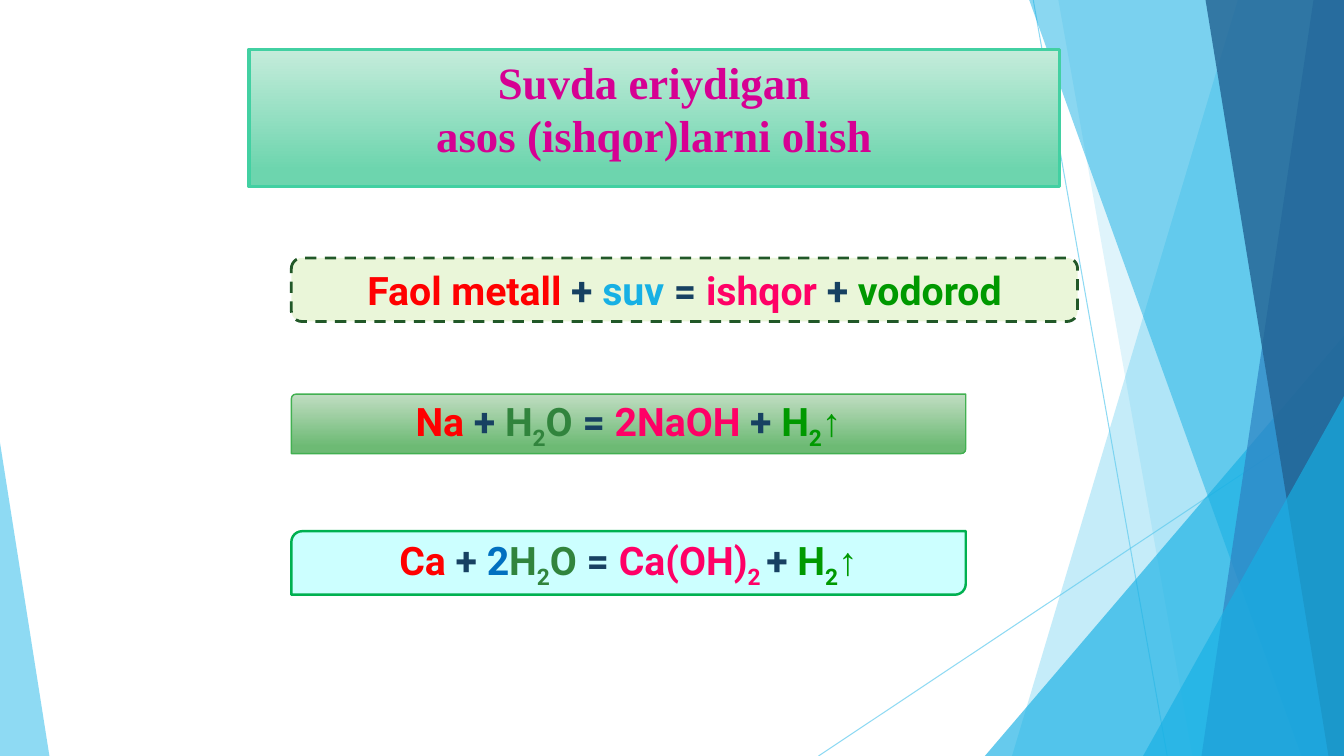
from lxml import etree
from pptx import Presentation
from pptx import util as u
from pptx.dml.color import RGBColor
from pptx.enum import dml, shapes, text
from pptx.oxml.ns import qn

COLORS = {
    "sky": "5FCBEF", "cyan": "17B0E4", "blue": "2E83C3", "deep": "226292",
    "red": "FF0000", "navy": "174162", "pink": "FF0066", "green": "009900",
    "moss": "31843D", "azure": "0070C0", "magenta": "D60093",
    "lime": "EAF6D9", "forest": "215828", "ice": "CCFFFF", "emerald": "00B050",
    "mint_light": "C5ECDB", "mint": "6DD5AE", "mint_edge": "42D0A2",
    "leaf_light": "C0DDC2", "leaf": "6DBA74", "leaf_edge": "42B051",
}
RGB = {name: RGBColor.from_string(value) for name, value in COLORS.items()}

presentation = Presentation()
presentation.slide_width, presentation.slide_height = u.Inches(13.333), u.Inches(7.5)
slide = presentation.slides.add_slide(presentation.slide_layouts[1])
# The grid has 100 columns and 100 rows
column, row = presentation.slide_width / 100, presentation.slide_height / 100


def set_opacity(shape, percent):
    for color in shape.element.iter(qn("a:srgbClr")):
        etree.SubElement(color, qn("a:alpha"), val=str(percent * 1000))


def style_box(shape, fills, edge, width):
    if len(fills) == 1:
        shape.fill.solid()
        shape.fill.fore_color.rgb = RGB[fills[0]]
    else:
        shape.fill.gradient()
        shape.fill.gradient_angle = 270
        for stop, position, name in zip(shape.fill.gradient_stops, (0, 0.88), fills):
            stop.position, stop.color.rgb = position, RGB[name]
    shape.line.color.rgb = RGB[edge]
    shape.line.width = u.Pt(width)
    shape.text_frame.word_wrap = True
    shape.text_frame.auto_size = text.MSO_AUTO_SIZE.NONE


# Thin lines behind the facets
for x1, y1, x2, y2 in [(76.88, 0, 86.85, 100), (100, 53.73, 60.9, 100)]:
    line = slide.shapes.add_connector(
        shapes.MSO_CONNECTOR.STRAIGHT,
        *(int(v) for v in (x1 * column, y1 * row, x2 * column, y2 * row)))
    line.line.color.rgb = RGB["sky"]
    line.line.width = u.Pt(0.75)
    set_opacity(line, 70)
    etree.SubElement(line.element.spPr, qn("a:effectLst"))

# Facets reach the right edge (top x, bottom x);
# triangles stand on the bottom (left, right, top, apex)
decorations = [
    ("facet", (92.1, 75.3), "sky", 36),
    ("facet", (78.75, 88.73), "sky", 20),
    ("triangle", (73.28, 100, 44.4, 1), "cyan", 66),
    ("facet", (76.58, 96.83), "cyan", 50),
    ("facet", (97.73, 89.4), "blue", 70),
    ("facet", (89.7, 98.85), "deep", 80),
    ("triangle", (85.05, 100, 52.4, 1), "cyan", 66),
    ("triangle", (0, 3.68, 58.53, 0), "sky", 70),
]
for kind, measures, color, opacity in decorations:
    if kind == "facet":
        top_x, bottom_x = measures
        builder = slide.shapes.build_freeform(top_x * column, 0)
        builder.add_line_segments(
            [(x * column, y * row) for x, y in [(100, 0), (100, 100), (bottom_x, 100)]])
        shape = builder.convert_to_shape()
    else:
        left, right, top, apex = measures
        shape = slide.shapes.add_shape(
            shapes.MSO_SHAPE.ISOSCELES_TRIANGLE, int(left * column), int(top * row),
            int((right - left) * column), int((100 - top) * row))
        shape.adjustments[0] = apex
    shape.shadow.inherit = False
    shape.fill.solid()
    shape.fill.fore_color.rgb = RGB[color]
    shape.line.fill.background()
    set_opacity(shape, opacity)

# Title and body placeholders, brought in front of the facets
title, body = slide.shapes.title, slide.placeholders[1]
for placeholder, left, top, width, height, outline in [
        (body, 21.68, 34.13, 58.5, 8.4, "roundRect"),
        (title, 18.53, 6.53, 60.3, 18.13, "rect")]:
    placeholder.left, placeholder.top = int(left * column), int(top * row)
    placeholder.width, placeholder.height = int(width * column), int(height * row)
    geometry = etree.SubElement(placeholder.element.spPr, qn("a:prstGeom"), prst=outline)
    etree.SubElement(geometry, qn("a:avLst"))
    placeholder.element.getparent().append(placeholder.element)

style_box(title, ["mint_light", "mint"], "mint_edge", 2.5)
title.text_frame.vertical_anchor = text.MSO_ANCHOR.TOP
heading = title.text_frame.paragraphs[0]
heading.text = "Suvda eriydigan\vasos (ishqor)larni olish"
heading.alignment = text.PP_ALIGN.CENTER
heading.font.name, heading.font.size, heading.font.bold = "Times New Roman", u.Pt(32), True
heading.font.color.rgb = RGB["magenta"]

style_box(body, ["lime"], "forest", 2)
body.line.dash_style = dml.MSO_LINE.DASH

# Boxes of the two reactions
reactions = []
for top, height, fills, edge, width, corner in [
        (52.13, 7.87, ["leaf_light", "leaf"], "leaf_edge", 1, 0.08),
        (70.27, 8.4, ["ice"], "emerald", 1.75, 0.17)]:
    box = slide.shapes.add_shape(
        shapes.MSO_SHAPE.ROUND_2_DIAG_RECTANGLE, int(21.68 * column), int(top * row),
        int(50.18 * column), int(height * row))
    box.shadow.inherit = False
    box.adjustments[0] = corner
    style_box(box, fills, edge, width)
    reactions.append(box)

# Equations: "_" marks a subscript run
hydrogen = [("+ ", "navy"), ("H", "green"), ("_2", "green"), ("↑", "green")]
water = [("H", "moss"), ("_2", "moss"), ("O ", "moss"), ("=", "navy")]
equations = [
    (body, [("Faol metall ", "red"), ("+ ", "navy"), ("suv ", "cyan"), ("= ", "navy"),
            ("ishqor ", "pink"), ("+ ", "navy"), ("vodorod", "green")]),
    (reactions[0], [("Na ", "red"), ("+ ", "navy"), *water, (" 2NaOH ", "pink"), *hydrogen]),
    (reactions[1], [("Ca ", "red"), ("+ ", "navy"), ("2", "azure"), *water,
                    (" Ca(OH)", "pink"), ("_2 ", "pink"), *hydrogen]),
]
for box, terms in equations:
    box.text_frame.vertical_anchor = text.MSO_ANCHOR.MIDDLE
    paragraph = box.text_frame.paragraphs[0]
    paragraph.alignment = text.PP_ALIGN.CENTER
    paragraph.space_before = u.Pt(0)
    properties = paragraph._p.get_or_add_pPr()
    properties.set("marL", "0")
    properties.set("indent", "0")
    etree.SubElement(properties, qn("a:buNone"))
    paragraph.font.size, paragraph.font.bold = u.Pt(28), True
    for term, color in terms:
        run = paragraph.add_run()
        run.text = term.lstrip("_")
        run.font.name = "Times New Roman" if term == "↑" else "Roboto"
        run.font.color.rgb = RGB[color]
        if term.startswith("_"):
            run.font._element.set("baseline", "-25000")

presentation.save("out.pptx")
